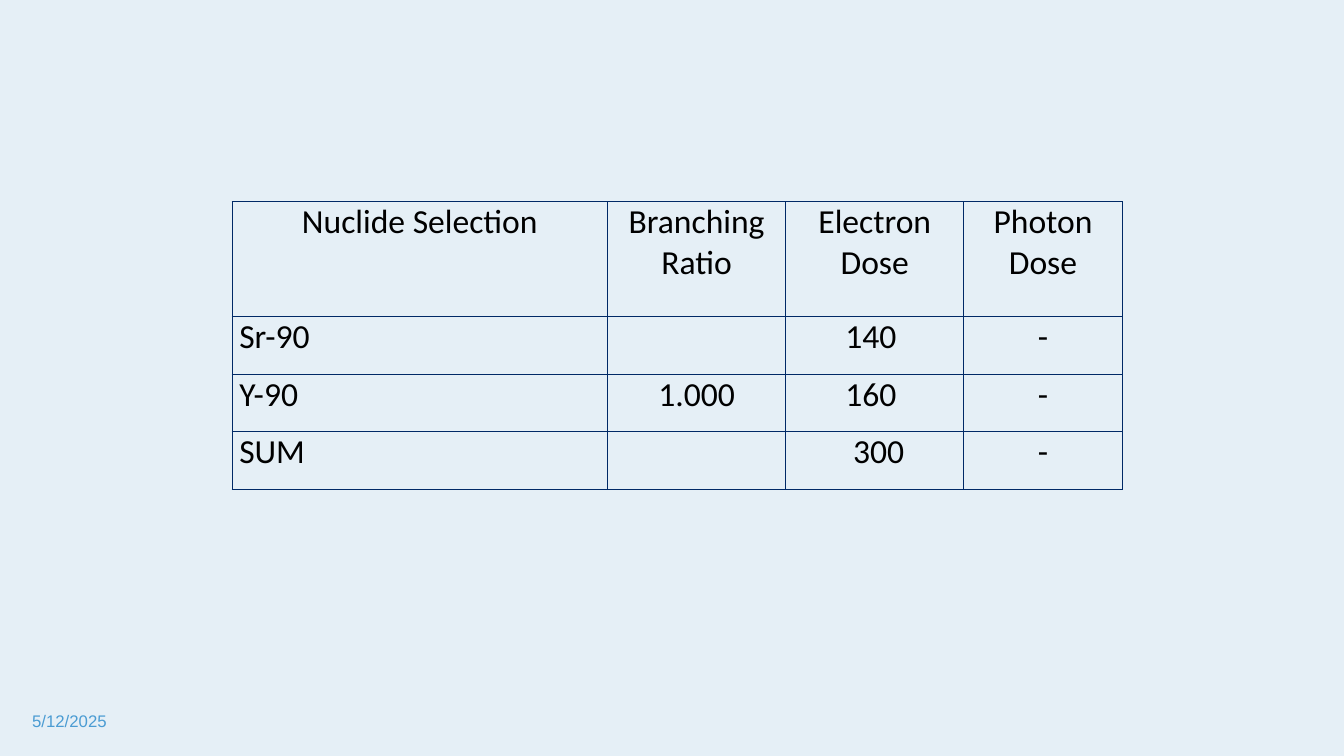
from lxml.etree import SubElement
from pptx import Presentation
from pptx.dml.color import RGBColor
from pptx.enum.text import MSO_ANCHOR, PP_ALIGN
from pptx.oxml.ns import qn
from pptx.util import Cm, Pt


def set_font(p, name, size, color):
    p.font.name = name
    p.font.size = Pt(size)
    p.font.color.rgb = RGBColor.from_string(color)


def add_borders(cell, color):
    tcPr = cell._tc.get_or_add_tcPr()
    for side in ("lnL", "lnR", "lnT", "lnB"):
        ln = SubElement(tcPr, qn(f"a:{side}"), w=str(Pt(1)))
        fill = SubElement(ln, qn("a:solidFill"))
        SubElement(fill, qn("a:srgbClr"), val=color)


prs = Presentation()
prs.slide_width, prs.slide_height = Cm(33.87), Cm(19.05)
s = prs.slides.add_slide(prs.slide_layouts[6])
s.background.fill.solid()
s.background.fill.fore_color.rgb = RGBColor.from_string("E5EFF6")

tf = s.shapes.add_textbox(Cm(0.56), Cm(17.65), Cm(7.62), Cm(1.02)).text_frame
tf.word_wrap = True
tf.vertical_anchor = MSO_ANCHOR.MIDDLE
p = tf.paragraphs[0]
p.text = "5/12/2025"
set_font(p, "Arial", 12, "4B9CD3")

rows = [
    ["Nuclide Selection", "Branching Ratio", "Electron Dose", "Photon Dose"],
    ["Sr-90", "", "140 ", "-"],
    ["Y-90", "1.000", "160 ", "-"],
    ["SUM", "", " 300", "-"],
]
widths = [9.46, 4.49, 4.49, 3.99]
heights = [2.9, 1.45, 1.45, 1.45]

sp = s.shapes.add_table(len(rows), len(widths), Cm(5.85), Cm(5.08),
                        Cm(sum(widths)), Cm(sum(heights)))
table = sp.table
table.first_row = False
table.horz_banding = False
for column, width in zip(table.columns, widths):
    column.width = Cm(width)
for row, height in zip(table.rows, heights):
    row.height = Cm(height)

for i, row in enumerate(rows):
    for j, text in enumerate(row):
        cell = table.cell(i, j)
        cell.margin_left = cell.margin_right = Cm(0.18)
        cell.margin_top = cell.margin_bottom = 0
        add_borders(cell, "002966")
        cell.fill.background()
        p = cell.text_frame.paragraphs[0]
        p.text = text
        p.alignment = PP_ALIGN.JUSTIFY if i and j == 0 else PP_ALIGN.CENTER
        set_font(p, "Calibri", 24, "000000")

prs.save("out.pptx")
